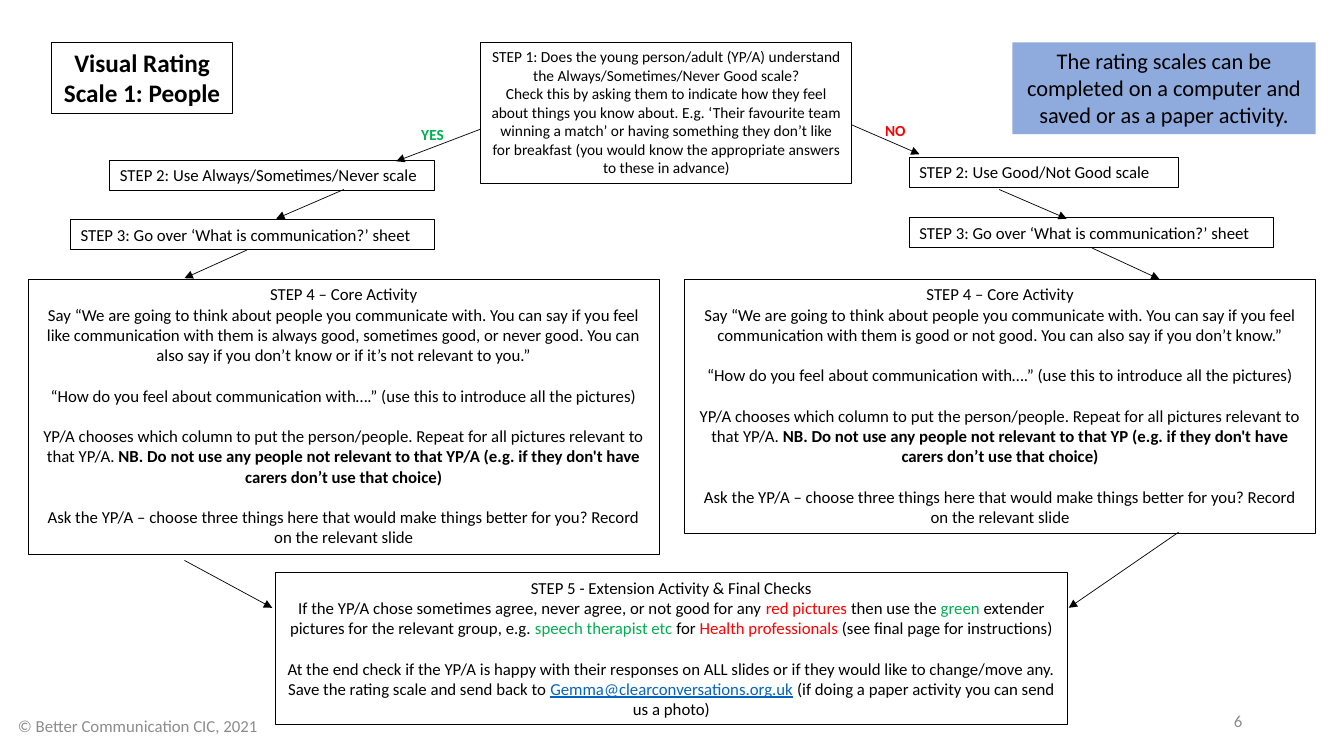
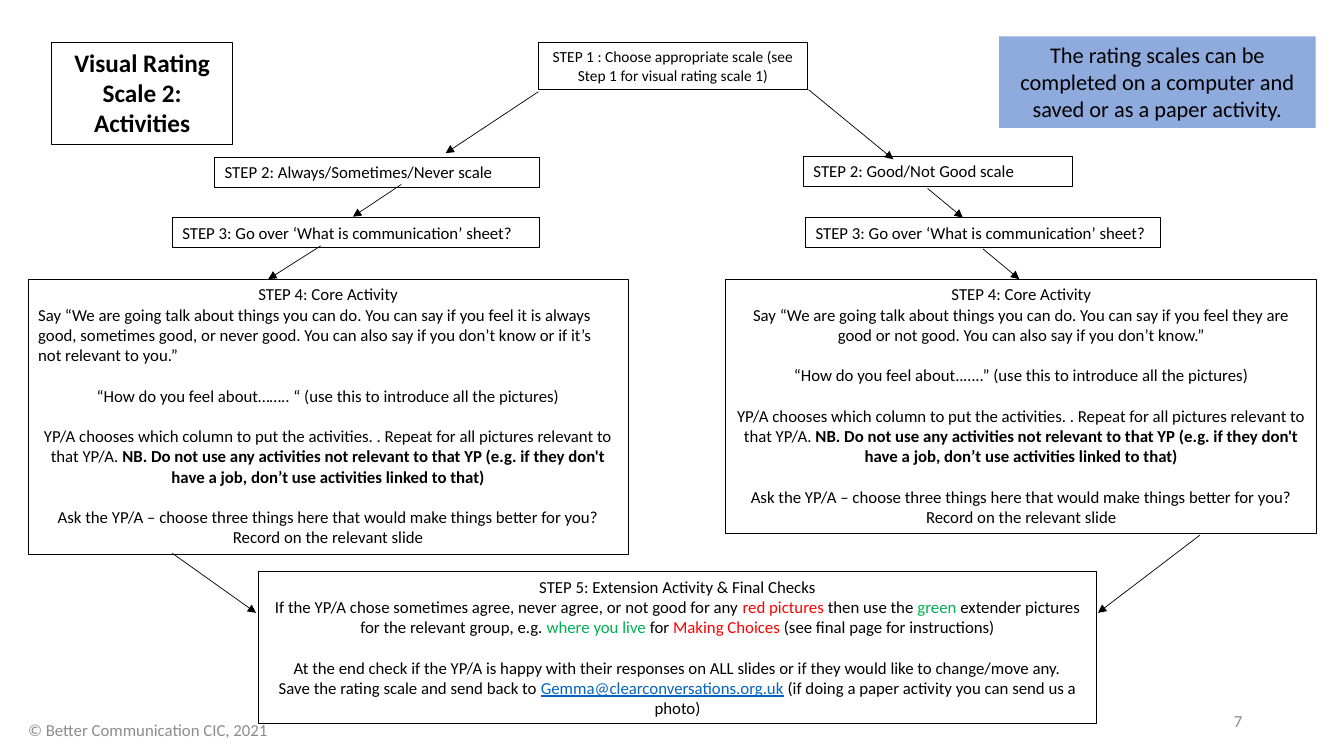
from lxml import etree
from pptx import Presentation
from pptx.dml.color import RGBColor
from pptx.enum.text import MSO_ANCHOR, MSO_AUTO_SIZE, PP_ALIGN
from pptx.enum.shapes import MSO_CONNECTOR
from pptx.oxml.ns import qn
from pptx.util import Inches, Pt

BLACK = RGBColor(0x00, 0x00, 0x00)
RED = RGBColor(0xFF, 0x00, 0x00)
GREEN = RGBColor(0x00, 0xB0, 0x50)
LINK = RGBColor(0x05, 0x63, 0xC1)
GREY = RGBColor(0x8C, 0x8C, 0x8C)
BLUE = RGBColor(0x8F, 0xAA, 0xDC)
FONT = "Calibri"
BLANK_LINE = Pt(14.65)
LEFT, CENTER, RIGHT = PP_ALIGN.LEFT, PP_ALIGN.CENTER, PP_ALIGN.RIGHT

NOTE = "The rating scales can be completed on a computer and saved or as a paper activity."
FOOTER = "© Better Communication CIC, 2021"
RECORD = ("Ask the YP/A – choose three things here that would make things better for you? "
          "Record on the relevant slide")
PEOPLE = "YP/A chooses which column to put the person/people. Repeat for all pictures relevant to that YP/A. "
ACTIVITIES = "YP/A chooses which column to put the activities. . Repeat for all pictures relevant to that YP/A. "
NO_JOB = ("NB. Do not use any activities not relevant to that YP (e.g. if they don't have a job, "
          "don’t use activities linked to that)")


def core(title, say, feel, choose, warning):
    return [[title, say], [feel], [[choose, (warning, "bold")]], [RECORD]]


def final(title, extender, group):
    return [
        [title,
         ["If the YP/A chose sometimes agree, never agree, or not good for any ",
          ("red pictures", RED), " then use the ", ("green", GREEN),
          " extender pictures for the relevant group, e.g. ", (extender, GREEN),
          " for ", (group, RED), " (see final page for instructions)"]],
        ["At the end check if the YP/A is happy with their responses on ALL slides "
         "or if they would like to change/move any.",
         ["Save the rating scale and send back to ",
          ("Gemma@clearconversations.org.uk", "link"),
          " (if doing a paper activity you can send us a photo)"]],
    ]


SLIDES = [
    {
        "number": "6",
        "title": ("Visual Rating Scale 1: People", 0.71),
        "note": (10.04, 0.42, 3.01, 0.91),
        "footer": (0.08, 7),
        "step1": ((4.77, 0.42, 3.68, 1.4), [[
            "STEP 1: Does the young person/adult (YP/A) understand the "
            "Always/Sometimes/Never Good scale?",
            "Check this by asking them to indicate how they feel about things you know about. "
            "E.g. ‘Their favourite team winning a match’ or having something they don’t like for "
            "breakfast (you would know the appropriate answers to these in advance)"]]),
        "steps": [
            ((1.09, 1.59, 3.22, 0.3), "STEP 2: Use Always/Sometimes/Never scale"),
            ((9.02, 1.56, 2.67, 0.3), "STEP 2: Use Good/Not Good scale"),
            ((0.7, 2.18, 3.61, 0.3), "STEP 3: Go over ‘What is communication?’ sheet"),
            ((9.02, 2.16, 3.61, 0.3), "STEP 3: Go over ‘What is communication?’ sheet"),
        ],
        "details": [
            ((0.28, 2.77, 6.26, 2.73), core(
                "STEP 4 – Core Activity",
                "Say “We are going to think about people you communicate with. You can say if you "
                "feel like communication with them is always good, sometimes good, or never good. "
                "You can also say if you don’t know or if it’s not relevant to you.”",
                "“How do you feel about communication with….” (use this to introduce all the pictures)",
                PEOPLE,
                "NB. Do not use any people not relevant to that YP/A (e.g. if they don't have "
                "carers don’t use that choice)")),
            ((6.79, 2.77, 6.26, 2.52), core(
                "STEP 4 – Core Activity",
                "Say “We are going to think about people you communicate with. You can say if you "
                "feel communication with them is good or not good. You can also say if you don’t know.”",
                "“How do you feel about communication with….” (use this to introduce all the pictures)",
                PEOPLE,
                "NB. Do not use any people not relevant to that YP (e.g. if they don't have "
                "carers don’t use that choice)")),
            ((2.73, 5.68, 7.86, 1.51), final(
                "STEP 5 - Extension Activity & Final Checks",
                "speech therapist etc", "Health professionals")),
        ],
        "labels": [((4.08, 1.19, 0.46, 0.29), "YES", GREEN),
                   ((8.68, 1.15, 0.46, 0.29), "NO", RED)],
        "arrows": [(4.77, 1.28, 3.93, 1.6), (3.41, 1.88, 2.74, 2.17), (2.45, 2.48, 1.83, 2.76),
                   (8.45, 1.24, 9.12, 1.53), (9.91, 1.88, 10.58, 2.17), (10.83, 2.46, 11.5, 2.77),
                   (1.83, 5.56, 2.7, 6.03), (11.69, 5.28, 10.6, 6.03)],
    },
    {
        "number": "7",
        "title": ("Visual Rating Scale 2: Activities", 1.01),
        "note": (9.91, 0.36, 3.14, 0.91),
        "footer": (0.18, 7.04),
        "step1": ((5.34, 0.42, 2.67, 0.47), [[
            "STEP 1 : Choose appropriate scale (see Step 1 for visual rating scale 1)"]]),
        "steps": [
            ((2.13, 1.56, 3.22, 0.3), "STEP 2: Always/Sometimes/Never scale"),
            ((7.97, 1.55, 2.67, 0.3), "STEP 2: Good/Not Good scale"),
            ((1.71, 2.16, 3.64, 0.3), "STEP 3: Go over ‘What is communication’ sheet?"),
            ((7.99, 2.16, 3.52, 0.3), "STEP 3: Go over ‘What is communication’ sheet?"),
        ],
        "details": [
            ((0.28, 2.77, 5.95, 2.73), core(
                "STEP 4: Core Activity",
                [("Say “We are going talk about things you can do. You can say if you feel it is "
                  "always good, sometimes good, or never good. You can also say if you don’t know "
                  "or if it’s not relevant to you.”", "left")],
                "“How do you feel about…….. “ (use this to introduce all the pictures)",
                ACTIVITIES, NO_JOB)),
            ((7.2, 2.77, 5.86, 2.52), core(
                "STEP 4: Core Activity",
                "Say “We are going talk about things you can do. You can say if you feel they are "
                "good or not good. You can also say if you don’t know.”",
                "“How do you feel about..…..” (use this to introduce all the pictures)",
                ACTIVITIES, NO_JOB)),
            ((2.56, 5.67, 8.32, 1.51), final(
                "STEP 5: Extension Activity & Final Checks",
                "where you live", "Making Choices")),
        ],
        "labels": [],
        "arrows": [(5.34, 0.91, 4.42, 1.52), (3.98, 1.83, 3.5, 2.15), (3.18, 2.44, 2.66, 2.77),
                   (8.02, 0.89, 8.86, 1.58), (9.2, 1.87, 9.55, 2.16), (9.75, 2.47, 10.11, 2.77),
                   (1.71, 5.49, 2.54, 6.08), (11.9, 5.31, 10.89, 6.08)],
    },
]


def add_runs(p, parts, size, color, bold):
    for part in [parts] if isinstance(parts, str) else parts:
        text, style = part if isinstance(part, tuple) else (part, None)
        r = p.add_run()
        r.text = text
        r.font.name, r.font.size = FONT, Pt(size)
        r.font.bold = bold or style == "bold"
        r.font.color.rgb = color
        if style == "left":
            p.alignment = LEFT
        elif style == "link":
            r.font.color.rgb = LINK
            r.font.underline = True
        elif isinstance(style, RGBColor):
            r.font.color.rgb = style


def add_box(s, at, groups, size=12, align=CENTER, color=BLACK, bold=False, fill=None, line=None):
    sp = s.shapes.add_textbox(*(Inches(v) for v in at))
    if fill is not None:
        sp.fill.solid()
        sp.fill.fore_color.rgb = fill
    if line is not None:
        sp.line.color.rgb = line
        sp.line.width = Pt(0.75)
    tf = sp.text_frame
    tf.word_wrap = True
    tf.auto_size = MSO_AUTO_SIZE.SHAPE_TO_FIT_TEXT
    p = tf.paragraphs[0]
    for i, group in enumerate([[groups]] if isinstance(groups, str) else groups):
        for j, parts in enumerate(group):
            if i or j:
                p = tf.add_paragraph()
            p.alignment = align
            if i and j == 0:
                p.space_before = BLANK_LINE
            add_runs(p, parts, size, color, bold)
    return sp


def add_footer(s, left, top, text, align):
    tf = add_box(s, (left, top, 3, 0.4), text, align=align, color=GREY).text_frame
    tf.auto_size = MSO_AUTO_SIZE.NONE
    tf.vertical_anchor = MSO_ANCHOR.MIDDLE


def add_arrow(s, ends):
    c = s.shapes.add_connector(MSO_CONNECTOR.STRAIGHT, *(Inches(v) for v in ends))
    c.line.color.rgb = BLACK
    c.line.width = Pt(0.5)
    etree.SubElement(c.line._get_or_add_ln(), qn("a:tailEnd"), type="triangle")
    etree.SubElement(c._element.spPr, qn("a:effectLst"))


def build_slide(prs, content):
    s = prs.slides.add_slide(prs.slide_layouts[6])
    title, height = content["title"]
    add_box(s, (0.51, 0.42, 1.8, height), title, 18, bold=True, line=BLACK)
    add_box(s, content["note"], NOTE, 16, fill=BLUE)
    at, groups = content["step1"]
    add_box(s, at, groups, 11, line=BLACK)
    for at, text in content["steps"]:
        add_box(s, at, text, align=LEFT, line=BLACK)
    for at, groups in content["details"]:
        add_box(s, at, groups, line=BLACK)
    for at, text, color in content["labels"]:
        add_box(s, at, text, 11, LEFT, color, bold=True)
    for ends in content["arrows"]:
        add_arrow(s, ends)
    add_footer(s, *content["footer"], FOOTER, LEFT)
    add_footer(s, 9.42, 6.95, content["number"], RIGHT)


def main():
    prs = Presentation()
    prs.slide_width, prs.slide_height = Inches(13.33), Inches(7.5)
    for content in SLIDES:
        build_slide(prs, content)
    prs.save("out.pptx")


if __name__ == "__main__":
    main()
